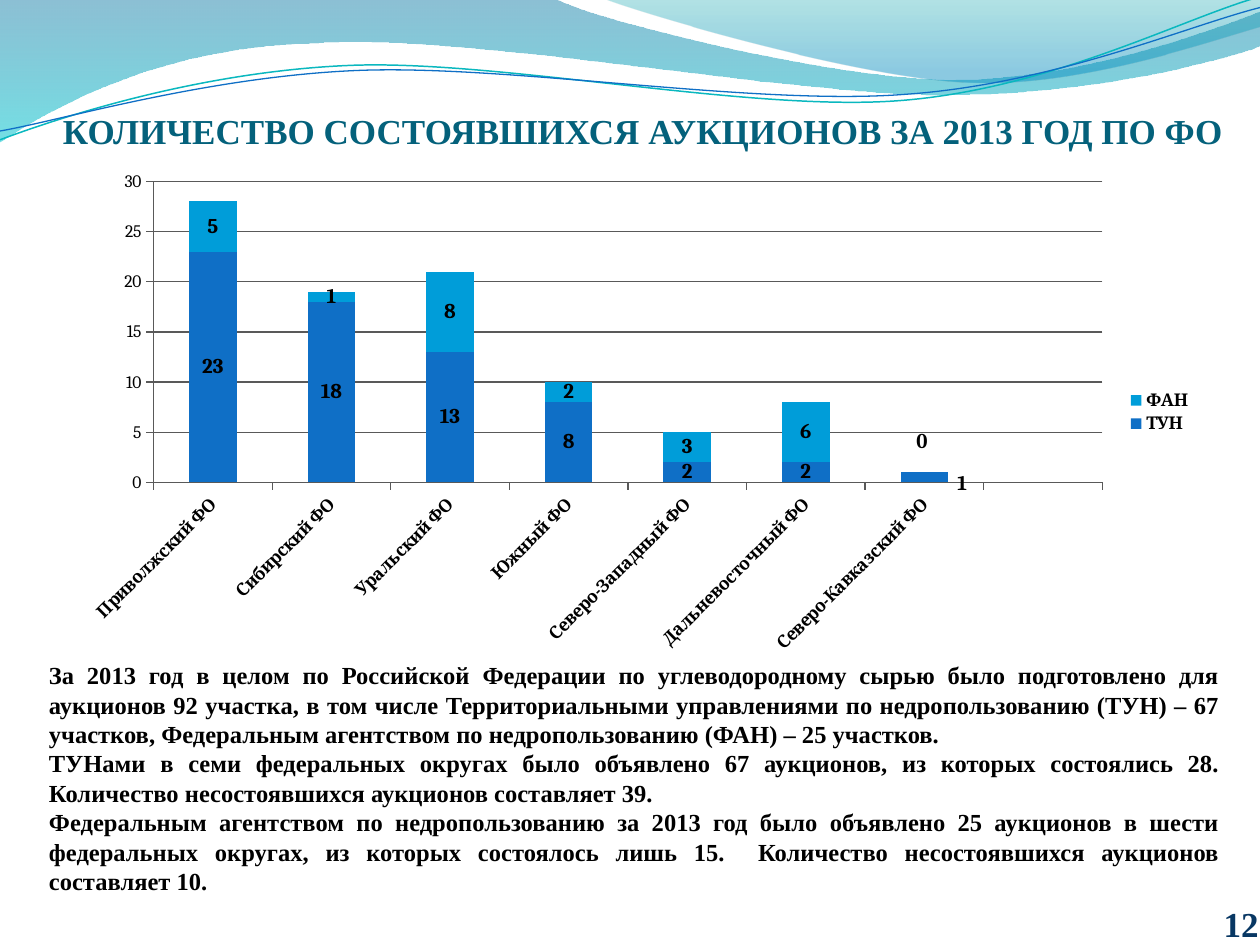
"""Build the slide on auctions held in 2013 by federal district."""
import pptx
import pptx.chart.data
import pptx.dml.color
import pptx.enum.chart
import pptx.enum.text
import pptx.oxml
import pptx.oxml.ns
import pptx.util

Inches, Pt = pptx.util.Inches, pptx.util.Pt
RGBColor = pptx.dml.color.RGBColor
qn = pptx.oxml.ns.qn
Align = pptx.enum.text.PP_ALIGN
Anchor = pptx.enum.text.MSO_ANCHOR
Kind = pptx.enum.chart

BLACK = RGBColor(0, 0, 0)
GREY = RGBColor(0x59, 0x59, 0x59)
TITLE = RGBColor(0x04, 0x61, 0x7B)
NAVY = RGBColor(0x08, 0x37, 0x63)
BLUE = RGBColor(0x0F, 0x6F, 0xC6)
SKY = RGBColor(0x00, 0x9D, 0xD9)
TEAL = RGBColor(0x0A, 0xB8, 0xBF)
DEEP = RGBColor(0x00, 0x74, 0xA1)
AQUA = RGBColor(0x00, 0xC6, 0xCF)
GREEN = RGBColor(0x00, 0xA1, 0xA9)
AZURE = RGBColor(0x00, 0x8B, 0xBF)

SERIF = "Times New Roman"
WIDE, HIGH = 9, 3.98

WAVES = [
    ([(0, 0), (4.4, -0.01), (4.76, 0.17, 6.64, 0.63, 7.58, 0.63),
      (8.53, 0.63, 9.58, 0.26, 10, 0.09), (10.01, 0.36),
      (9.83, 0.44, 8.7, 0.76, 7.46, 0.75), (6.22, 0.75, 3.82, 0.28, 2.57, 0.34),
      (1.29, 0.36, 0.46, 0.83, -0.01, 1.13), (0, 0)],
     [(0, DEEP, 45), (1, AQUA, 55)]),
    ([(4.79, -0.01), (5.09, 0.11, 6.82, 0.62, 7.69, 0.65),
      (8.56, 0.69, 9.61, 0.32, 10, 0.21), (10, 0), (4.79, -0.01)],
     [(0, GREEN, 30), (0.8, AZURE, 45)]),
]
CURVES = [
    ([(0, 1.11), (0.48, 0.93, 1.58, 0.57, 2.77, 0.52),
      (3.95, 0.47, 5.93, 0.89, 7.13, 0.8), (8.33, 0.71, 9.38, 0.15, 9.98, -0.02)],
     TEAL, 0.85),
    ([(0, 1.04), (0.47, 0.96, 1.64, 0.61, 2.83, 0.56),
      (4.03, 0.51, 5.97, 0.84, 7.17, 0.75), (8.36, 0.67, 9.41, 0.21, 10, 0.06)],
     BLUE, 0.75),
]
AREAS = ["Приволжский ФО", "Сибирский ФО", "Уральский ФО", "Южный ФО",
         "Северо-Западный ФО", "Дальневосточный ФО", "Северо-Кавказский ФО", ""]
BARS = [
    ("ТУН", [23, 18, 13, 8, 2, 2, 1, None], BLUE, {"x": 0.3, "y": 0.05}),
    ("ФАН", [5, 1, 8, 2, 3, 6, 0, None], SKY, {"x": -0.02, "y": -0.24}),
]
HEAD = "КОЛИЧЕСТВО СОСТОЯВШИХСЯ АУКЦИОНОВ ЗА 2013 ГОД ПО ФО"
BODY = [
    "За 2013 год в целом по Российской Федерации по углеводородному сырью было "
    "подготовлено для аукционов 92 участка, в том числе Территориальными "
    "управлениями по недропользованию (ТУН) – 67 участков, Федеральным агентством "
    "по недропользованию (ФАН) – 25 участков.",
    "ТУНами в семи федеральных округах было объявлено 67 аукционов, из которых "
    "состоялись 28. Количество несостоявшихся аукционов составляет 39.",
    "Федеральным агентством по недропользованию за 2013 год было объявлено 25 "
    "аукционов в шести федеральных округах, из которых состоялось лишь 15.  "
    "Количество несостоявшихся аукционов составляет 10.",
]


def put(thing, **format):
    """Set each format value on an object."""
    for name, value in format.items():
        setattr(thing, name, value)


def style(font, size, color=BLACK, bold=True, name="Cambria"):
    """Set a font's face, size, weight and colour."""
    put(font, name=name, size=Pt(size), bold=bold)
    font.color.rgb = color


def draw(slide, parts, close):
    """Add a freeform and bend each six-number part into a Bezier curve."""
    groups = [[(Inches(part[i]), Inches(part[i + 1])) for i in range(0, len(part), 2)]
              for part in parts]
    pen = slide.shapes.build_freeform(*groups[0][0], scale=1.0)
    pen.add_line_segments([p for group in groups[1:] for p in group], close=close)
    shape = pen.convert_to_shape()
    shape.shadow.inherit = False
    lines = list(shape._element.iter(qn("a:lnTo")))
    for group in groups[1:]:
        knots, lines = lines[:len(group)], lines[len(group):]
        if len(knots) == 3:
            bend = pptx.oxml.parse_xml(
                f'<a:cubicBezTo {pptx.oxml.ns.nsdecls("a")}/>')
            knots[0].addprevious(bend)
            for knot in knots:
                bend.append(knot[0])
                knot.getparent().remove(knot)
    return shape


def add_wave(slide, parts, stops):
    """Add a filled wave with a see-through gradient."""
    shape = draw(slide, parts, True)
    shape.line.fill.background()
    shape.fill.gradient()
    shape.fill.gradient_angle = 270
    for stop, (place, color, _) in zip(shape.fill.gradient_stops, stops):
        stop.position = place
        stop.color.rgb = color
    tints = list(shape._element.spPr.iter(qn("a:srgbClr")))
    for tint, (_, _, alpha) in zip(tints, stops):
        tint.append(pptx.oxml.parse_xml(
            f'<a:alpha {pptx.oxml.ns.nsdecls("a")} val="{alpha * 1000}"/>'))


def add_curve(slide, parts, color, width):
    """Add an open curved line."""
    shape = draw(slide, parts, False)
    shape.fill.background()
    shape.line.color.rgb = color
    shape.line.width = Pt(width)


def add_text(slide, box, lines, size, color, align, frame):
    """Add a text box with one paragraph a line."""
    text = slide.shapes.add_textbox(*map(Inches, box)).text_frame
    put(text, word_wrap=True, **frame)
    text.text = "\n".join(lines)
    for para in text.paragraphs:
        para.alignment = align
        style(para.runs[0].font, size, color, name=SERIF)


def layout(inner=False, **sizes):
    """Make a manual layout from lengths in inches within the chart."""
    tags = '<c:layoutTarget val="inner"/>' if inner else ""
    if "w" in sizes:
        tags += '<c:xMode val="edge"/><c:yMode val="edge"/>'
    for key, value in sizes.items():
        tags += f'<c:{key} val="{value / (WIDE if key in "xw" else HIGH):.5f}"/>'
    return pptx.oxml.parse_xml(
        f'<c:layout {pptx.oxml.ns.nsdecls("c")}>'
        f'<c:manualLayout>{tags}</c:manualLayout></c:layout>')


def place(part, after, new):
    """Put a layout after a child, or first, in place of any old one."""
    for old in part.findall(qn("c:layout")):
        part.remove(old)
    spot = 0 if after is None else part.index(part.find(qn(after))) + 1
    part.insert(spot, new)


def add_chart(slide):
    """Add the stacked column chart."""
    data = pptx.chart.data.CategoryChartData()
    data.categories = AREAS
    for name, values, _, _ in BARS:
        data.add_series(name, values)
    chart = slide.shapes.add_chart(
        Kind.XL_CHART_TYPE.COLUMN_STACKED,
        *map(Inches, (0.56, 1.29, WIDE, HIGH)), data).chart
    put(chart, has_title=False, has_legend=True)
    style(chart.font, 10, bold=False)
    put(chart.legend, position=Kind.XL_LEGEND_POSITION.RIGHT, include_in_layout=False)
    style(chart.legend.font, 10)
    put(chart.plots[0], gap_width=150, overlap=100, vary_by_categories=False)
    for axis, bold in ((chart.category_axis, True), (chart.value_axis, False)):
        axis.major_tick_mark = Kind.XL_TICK_MARK.OUTSIDE
        axis.format.line.color.rgb = GREY
        style(axis.tick_labels.font, 10, bold=bold)
    chart.category_axis._element.find(qn("c:txPr")).find(
        qn("a:bodyPr")).set("rot", "-2700000")
    put(chart.value_axis, minimum_scale=0, maximum_scale=30, major_unit=5)
    chart.value_axis.major_gridlines.format.line.color.rgb = GREY
    for row, (_, _, color, shift) in zip(chart.plots[0].series, BARS):
        row.format.fill.solid()
        row.format.fill.fore_color.rgb = color
        row.data_labels.show_value = True
        style(row.data_labels.font, 12)
        style(row.points[6].data_label.font, 12)
        label = next(row._element.iter(qn("c:dLbl")))
        place(label, "c:idx", layout(**shift))
        for leader in row._element.iter(qn("c:showLeaderLines")):
            leader.set("val", "0")
    plot = next(chart._chartSpace.iter(qn("c:plotArea")))
    place(plot, None, layout(True, x=0.66, y=0.15, w=7.53, h=2.39))
    place(chart.legend._element, "c:legendPos", layout(x=8.33, y=1.78, w=0.63, h=0.4))


def main():
    """Build and save the slide."""
    deck = pptx.Presentation()
    put(deck, slide_width=Inches(10), slide_height=Inches(7.5))
    slide = deck.slides.add_slide(deck.slide_layouts[6])
    for wave in WAVES:
        add_wave(slide, *wave)
    for curve in CURVES:
        add_curve(slide, *curve)
    tight = dict(vertical_anchor=Anchor.BOTTOM, margin_left=0, margin_right=0,
                 margin_top=0, margin_bottom=0)
    add_text(slide, (0.5, 0.63, 9.5, 0.57), [HEAD], 20, TITLE, Align.LEFT, tight)
    add_chart(slide)
    add_text(slide, (0.29, 5.19, 9.49, 1.99), BODY, 14, BLACK, Align.JUSTIFY, {})
    add_text(slide, (7.66, 7.1, 2.33, 0.4), ["12"], 20, NAVY, Align.RIGHT, tight)
    deck.save("out.pptx")


if __name__ == "__main__":
    main()
